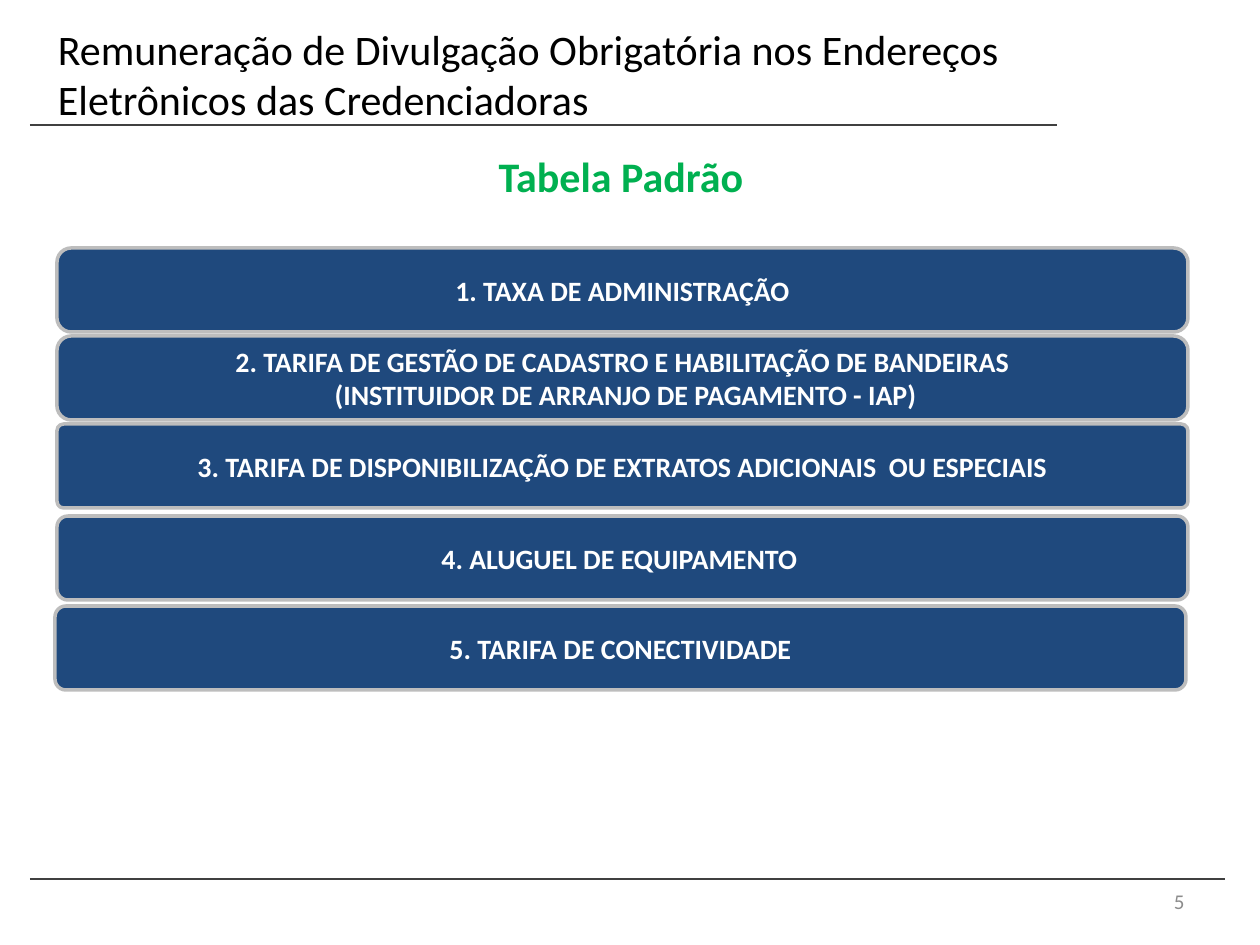
"""Build the slide listing the standard table of acquirer fees."""
import pptx
import pptx.util
import pptx.dml.color
import pptx.enum.shapes
import pptx.enum.text
import lxml.etree

SCALE = 914400 / 126
THEME = {
    "font": "Calibri",
    "title": "000000", "heading": "00B050", "number": "8C8C8C", "rule": "404040",
    "bar": "1F497D", "bar_line": "BDBDBD", "bar_text": "FFFFFF",
    "large": 24, "medium": 16, "small": 12,
}
ALIGN = pptx.enum.text.PP_ALIGN
ANCHOR = pptx.enum.text.MSO_ANCHOR
SHAPES = pptx.enum.shapes.MSO_SHAPE


def px(*lengths):
    return [pptx.util.Emu(round(length * SCALE)) for length in lengths]


def write(shape, text, size, color, bold=False, align=ALIGN.LEFT, anchor=ANCHOR.MIDDLE, inset=None):
    frame = shape.text_frame
    frame.word_wrap = True
    frame.vertical_anchor = anchor
    if inset is not None:
        frame.margin_left = frame.margin_top = frame.margin_right = frame.margin_bottom = px(inset)[0]
    frame.text = text
    for paragraph in frame.paragraphs:
        paragraph.alignment = align
        paragraph.font.name = THEME["font"]
        paragraph.font.size = pptx.util.Pt(THEME[size])
        paragraph.font.bold = bold
        paragraph.font.color.rgb = pptx.dml.color.RGBColor.from_string(THEME[color])


presentation = pptx.Presentation()
presentation.slide_width, presentation.slide_height = px(1260, 945)
slide = presentation.slides.add_slide(presentation.slide_layouts[6])
shapes = slide.shapes

for right, y in [(1057, 125), (1225, 879)]:
    rule = shapes.add_connector(pptx.enum.shapes.MSO_CONNECTOR.STRAIGHT, *px(30, y, right, y))
    rule.line.width = pptx.util.Pt(0.75)
    rule.line.color.rgb = pptx.dml.color.RGBColor.from_string(THEME["rule"])
    lxml.etree.SubElement(rule._element.spPr, pptx.oxml.ns.qn("a:effectLst"))

title = shapes.add_textbox(*px(53, 37, 997, 73))
write(title, "Remuneração de Divulgação Obrigatória nos Endereços Eletrônicos das Credenciadoras",
      size="large", color="title", inset=5)

heading = shapes.add_textbox(*px(54, 144, 1134, 63))
write(heading, "Tabela Padrão", size="large", color="heading", bold=True,
      align=ALIGN.CENTER, anchor=ANCHOR.TOP)

fees = [
    (57, 248, 0.17, "1. TAXA DE ADMINISTRAÇÃO"),
    (57, 336, 0.17, "2. TARIFA DE GESTÃO DE CADASTRO E HABILITAÇÃO DE BANDEIRAS\n"
                    " (INSTITUIDOR DE ARRANJO DE PAGAMENTO - IAP)"),
    (57, 424, 0.08, "3. TARIFA DE DISPONIBILIZAÇÃO DE EXTRATOS ADICIONAIS  OU ESPECIAIS"),
    (57, 516, 0.13, "4. ALUGUEL DE EQUIPAMENTO "),
    (55, 606, 0.13, "5. TARIFA DE CONECTIVIDADE"),
]
for left, top, rounding, fee in fees:
    bar = shapes.add_shape(SHAPES.ROUNDED_RECTANGLE, *px(left, top, 1131, 84))
    bar.adjustments[0] = rounding
    bar.shadow.inherit = False
    bar.fill.solid()
    bar.fill.fore_color.rgb = pptx.dml.color.RGBColor.from_string(THEME["bar"])
    bar.line.color.rgb = pptx.dml.color.RGBColor.from_string(THEME["bar_line"])
    bar.line.width = pptx.util.Pt(2)
    write(bar, fee, size="medium", color="bar_text", bold=True, align=ALIGN.CENTER)

number = shapes.add_textbox(*px(903, 876, 294, 50))
write(number, "5", size="small", color="number", align=ALIGN.RIGHT)

presentation.save("out.pptx")
